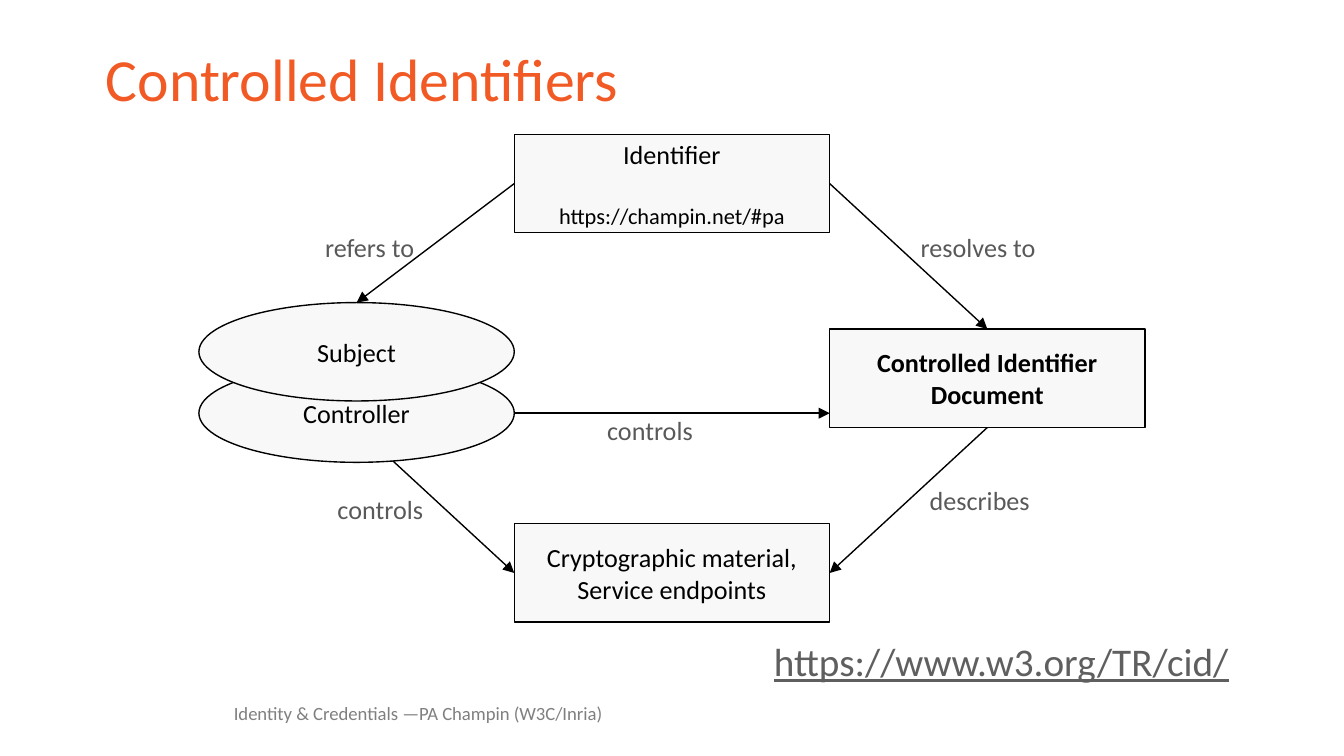
from typing import NamedTuple

from lxml import etree
from pptx import Presentation
from pptx import util as u
from pptx.dml.color import RGBColor
from pptx.enum import shapes, text
from pptx.oxml.ns import qn

FONT = "Calibri"
INK, GREY, PALE = "000000", "595959", "F8F8F8"
LEFT, MID, RIGHT = text.PP_ALIGN.LEFT, text.PP_ALIGN.CENTER, text.PP_ALIGN.RIGHT
CENTRE, BASE = text.MSO_ANCHOR.MIDDLE, text.MSO_ANCHOR.BOTTOM
RECT, OVAL = shapes.MSO_SHAPE.RECTANGLE, shapes.MSO_SHAPE.OVAL

# Node grid in cm: three columns that touch edge to edge
WIDE, HIGH, START = 5.96, 1.86, 3.76
COLS = [START + WIDE * i for i in range(3)]
IDENT, SUBJ, CTRL, DOC, CRYPT = 2.54, 5.72, 6.88, 6.22, 9.9


class Line(NamedTuple):
    words: str
    size: float = 14
    bold: bool = False
    gap: float = 0


class Node(NamedTuple):
    kind: shapes.MSO_SHAPE
    col: int
    top: float
    lines: list[Line]


class Label(NamedTuple):
    words: str
    box: tuple[float, float, float, float]
    align: text.PP_ALIGN


class Arrow(NamedTuple):
    start: tuple[float, float]
    end: tuple[float, float]


def paint(hue: str) -> RGBColor:
    return RGBColor.from_string(hue)


def write(shape, lines: list[Line], hue: str, align=MID, anchor=CENTRE,
          pad=(0.25, 0.25, 0.25, 0.25), space=1.0, under=False) -> None:
    frame = shape.text_frame
    sides = ("margin_left", "margin_top", "margin_right", "margin_bottom")
    form = {"word_wrap": True, "auto_size": text.MSO_AUTO_SIZE.NONE,
            "vertical_anchor": anchor}
    form |= {side: u.Cm(gap) for side, gap in zip(sides, pad)}
    for key, val in form.items():
        setattr(frame, key, val)
    for i, line in enumerate(lines):
        para = frame.add_paragraph() if i else frame.paragraphs[0]
        para.alignment, para.line_spacing = align, space
        if line.gap:
            para.space_before = u.Pt(line.gap)
        run = para.add_run()
        run.text = line.words
        look = {"name": FONT, "size": u.Pt(line.size), "bold": line.bold,
                "underline": under}
        for key, val in look.items():
            setattr(run.font, key, val)
        run.font.color.rgb = paint(hue)


def add_box(slide, box: tuple[float, float, float, float]):
    return slide.shapes.add_textbox(*map(u.Cm, box))


def draw_node(slide, node: Node) -> None:
    box = (COLS[node.col], node.top, WIDE, HIGH)
    shape = slide.shapes.add_shape(node.kind, *map(u.Cm, box))
    shape.shadow.inherit = False
    shape.fill.solid()
    shape.fill.fore_color.rgb = paint(PALE)
    shape.line.color.rgb = paint(INK)
    shape.line.width = u.Pt(0.75)
    write(shape, node.lines, INK)


def draw_arrow(slide, arrow: Arrow) -> None:
    ends = map(u.Cm, arrow.start + arrow.end)
    link = slide.shapes.add_connector(shapes.MSO_CONNECTOR.STRAIGHT, *ends)
    link.line.color.rgb = paint(INK)
    link.line.width = u.Pt(0.75)
    etree.SubElement(link.line._get_or_add_ln(), qn("a:tailEnd"), type="triangle")
    etree.SubElement(link._element.spPr, qn("a:effectLst"))


def draw_label(slide, label: Label) -> None:
    write(add_box(slide, label.box), [Line(label.words)], GREY, label.align)


# Points where arrows meet the nodes
half = HIGH / 2
west, east = COLS[1], COLS[2]
subj_x, doc_x = COLS[0] + WIDE / 2, COLS[2] + WIDE / 2
ctrl_y = CTRL + half

ARROWS = [
    Arrow((west, IDENT + half), (subj_x, SUBJ)),
    Arrow((east, IDENT + half), (doc_x, DOC)),
    Arrow((doc_x, DOC + HIGH), (east, CRYPT + half)),
    Arrow((subj_x, DOC + HIGH), (west, CRYPT + half)),
    Arrow((west, ctrl_y), (east, ctrl_y)),
]
LABELS = [
    Label("refers to", (5.41, 4.11, 2.67, 1.12), RIGHT),
    Label("resolves to", (17.15, 4.11, 3.02, 1.12), LEFT),
    Label("describes", (17.32, 8.89, 2.97, 1.12), LEFT),
    Label("controls", (5.23, 9.07, 3.02, 1.12), RIGHT),
    Label("controls", (10.95, 7.57, 2.67, 1.12), MID),
]
# The subject overlaps the controller, so it comes later
NODES = [
    Node(RECT, 1, IDENT, [Line("Identifier"),
                          Line("https://champin.net/#pa", 12, gap=17)]),
    Node(RECT, 2, DOC, [Line("Controlled Identifier Document", bold=True)]),
    Node(OVAL, 0, CTRL, [Line("Controller")]),
    Node(OVAL, 0, SUBJ, [Line("Subject")]),
    Node(RECT, 1, CRYPT, [Line("Cryptographic material,"),
                          Line("Service endpoints")]),
]


def main() -> None:
    deck = Presentation()
    deck.slide_width, deck.slide_height = u.Cm(25.4), u.Cm(14.29)
    slide = deck.slides.add_slide(deck.slide_layouts[5])

    # Title
    title = slide.shapes.title
    place = {"left": 1.75, "top": 0.76, "width": 21.9, "height": 1.6}
    for key, val in place.items():
        setattr(title, key, u.Cm(val))
    write(title, [Line("Controlled Identifiers", 32)], "F15A24", LEFT,
          pad=(0.25, 0.13, 0.25, 0.13), space=0.9)

    # Diagram
    for arrow in ARROWS:
        draw_arrow(slide, arrow)
    for label in LABELS:
        draw_label(slide, label)
    for node in NODES:
        draw_node(slide, node)

    # Link and footer
    write(add_box(slide, (1.75, 11.84, 21.9, 1.22)),
          [Line("https://www.w3.org/TR/cid/", 21)], "5F5F5F", RIGHT, BASE,
          pad=(0.25, 0.13, 0.43, 0.13), space=0.8, under=True)
    write(add_box(slide, (4.42, 13.23, 7.7, 0.46)),
          [Line("Identity & Credentials —PA Champin (W3C/Inria)", 10)],
          "7F7F7F", LEFT, BASE, pad=(0, 0, 0, 0), space=0.9)

    deck.save("out.pptx")


if __name__ == "__main__":
    main()
